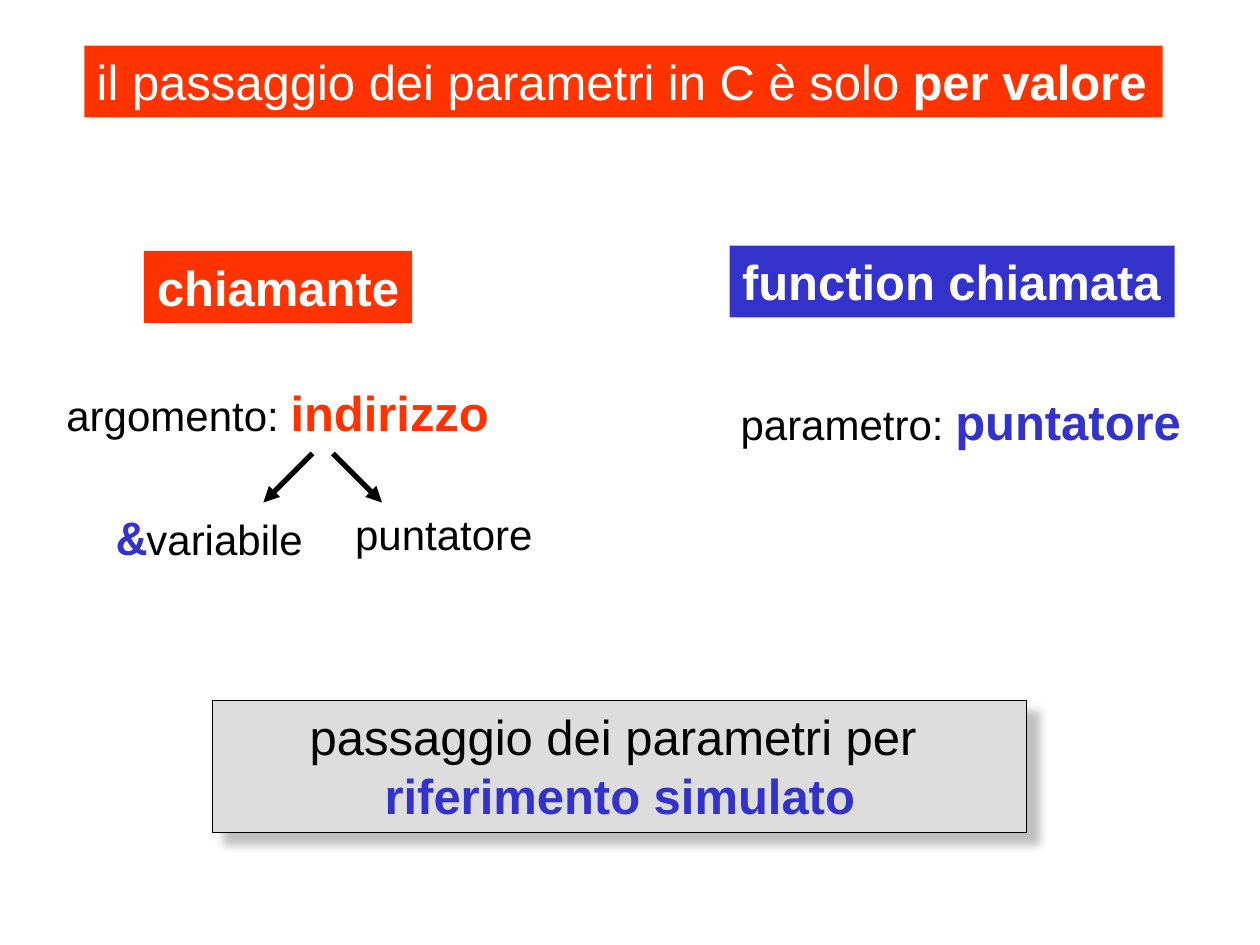
from lxml import etree
from pptx import Presentation
from pptx.dml.color import RGBColor
from pptx.enum.shapes import MSO_CONNECTOR, MSO_SHAPE
from pptx.enum.text import MSO_ANCHOR, PP_ALIGN
from pptx.oxml import parse_xml
from pptx.oxml.ns import nsdecls, qn
from pptx.util import Cm, Pt

RECT = MSO_SHAPE.RECTANGLE
STRAIGHT = MSO_CONNECTOR.STRAIGHT
TOP = MSO_ANCHOR.TOP
LEFT, CENTER = PP_ALIGN.LEFT, PP_ALIGN.CENTER

BLACK = RGBColor(0x00, 0x00, 0x00)
WHITE = RGBColor(0xFF, 0xFF, 0xFF)
RED = RGBColor(0xFF, 0x33, 0x00)
BLUE = RGBColor(0x33, 0x33, 0xCC)
GRAY = RGBColor(0xDD, 0xDD, 0xDD)

SMALL, LARGE = 24, 28
ROW_H = 1.45

LABELS = [
    ((1.09, 7.59, 9.04, ROW_H),
     [("argomento: ", dict(size=SMALL)), ("indirizzo", dict(color=RED, bold=True))]),
    ((14.68, 7.77, 9.4, ROW_H),
     [("parametro: ", dict(size=SMALL)), ("puntatore", dict(color=BLUE, bold=True))]),
    ((2.11, 10.08, 4.27, ROW_H),
     [("&", dict(color=BLUE, bold=True, font="Courier New")),
      ("variabile", dict(size=SMALL))]),
    ((6.91, 10.13, 4.09, 1.27), [("puntatore", dict(size=SMALL))]),
]

BANNERS = [
    ((2.9, 5.06, 5.41, ROW_H), RED, CENTER,
     [("chiamante", dict(color=WHITE, bold=True))]),
    ((14.71, 4.95, 8.97, ROW_H), BLUE, LEFT,
     [("function chiamata", dict(color=WHITE, bold=True))]),
    ((1.7, 0.92, 21.74, ROW_H), RED, LEFT,
     [("il passaggio dei parametri in C è solo ", dict(color=WHITE)),
      ("per valore", dict(color=WHITE, bold=True))]),
]

SUMMARY_BOX = (4.29, 14.12, 16.41, 2.67)
SUMMARY = [
    [("passaggio dei parametri per ", {})],
    [("riferimento simulato", dict(color=BLUE, bold=True))],
]

ARROW_TOP, ARROW_SPAN = 9.14, 0.99
ARROWS = [(6.3, -1), (6.71, 1)]

SHADOW = (
    f'<a:effectLst {nsdecls("a")}><a:outerShdw blurRad="63500" dist="107950" '
    'dir="2700000" algn="ctr" rotWithShape="0"><a:srgbClr val="808080">'
    '<a:alpha val="50000"/></a:srgbClr></a:outerShdw></a:effectLst>'
)


def add_run(p, text, size=LARGE, color=BLACK, bold=False, font="Arial"):
    r = p.add_run()
    r.text = text
    r.font.name = font
    r.font.size = Pt(size)
    r.font.bold = bold
    r.font.color.rgb = color


def write(sp, paragraphs, align=LEFT, wrap=False):
    tf = sp.text_frame
    tf.word_wrap = wrap
    tf.vertical_anchor = TOP
    for i, runs in enumerate(paragraphs):
        p = tf.add_paragraph() if i else tf.paragraphs[0]
        p.alignment = align
        for text, style in runs:
            add_run(p, text, **style)


def add_box(s, box, fill):
    sp = s.shapes.add_shape(RECT, *map(Cm, box))
    sp.shadow.inherit = False
    sp.fill.solid()
    sp.fill.fore_color.rgb = fill
    sp.line.fill.background()
    return sp


def add_arrow(s, x, direction):
    cx = s.shapes.add_connector(
        STRAIGHT, Cm(x), Cm(ARROW_TOP),
        Cm(x + direction * ARROW_SPAN), Cm(ARROW_TOP + ARROW_SPAN))
    cx.line.color.rgb = BLACK
    cx.line.width = Pt(3)
    etree.SubElement(cx.line._get_or_add_ln(), qn("a:tailEnd"), type="triangle")
    etree.SubElement(cx._element.spPr, qn("a:effectLst"))


def add_summary(s):
    sp = add_box(s, SUMMARY_BOX, GRAY)
    sp.line.color.rgb = BLACK
    sp.line.width = Pt(0.75)
    spPr = sp._element.spPr
    spPr.replace(spPr.find(qn("a:effectLst")), parse_xml(SHADOW))
    write(sp, SUMMARY, CENTER, wrap=True)


def main():
    prs = Presentation()
    prs.slide_width, prs.slide_height = Cm(25.4), Cm(19.05)
    s = prs.slides.add_slide(prs.slide_layouts[6])
    for box, runs in LABELS:
        write(s.shapes.add_textbox(*map(Cm, box)), [runs])
    for box, fill, align, runs in BANNERS:
        write(add_box(s, box, fill), [runs], align)
    for x, direction in ARROWS:
        add_arrow(s, x, direction)
    add_summary(s)
    prs.save("out.pptx")


if __name__ == "__main__":
    main()
